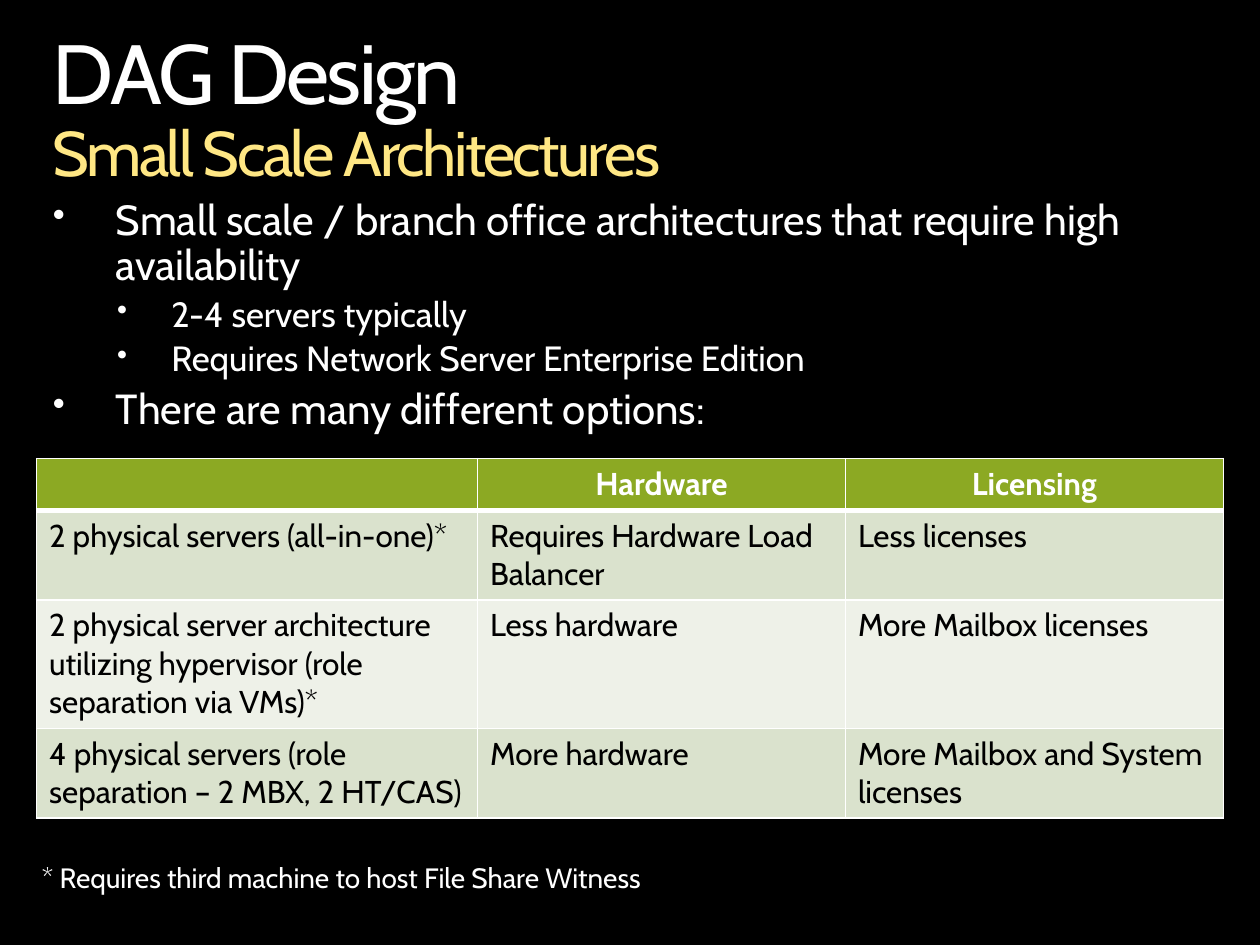
"""Build the slide on small scale DAG architectures."""
from lxml import etree
from pptx import Presentation
from pptx import util as u
from pptx.dml.color import RGBColor
from pptx.enum import text
from pptx.oxml.ns import qn

FONT = "Cabin"
WHITE, BLACK, YELLOW, GREEN = "FFFFFF", "000000", "FFE784", "8CA923"
BANDS = ["DAE2CD", "EEF1E8"]

BULLETS = [
    (0, "Small scale / branch office architectures that require high availability"),
    (1, "2-4 servers typically"),
    (1, "Requires Network Server Enterprise Edition"),
    (0, "There are many different options:"),
]
BULLET_LEVELS = [(24, 0.5, 0.5), (20, 0.94, 0.43)]

OPTIONS = [
    ["", "Hardware", "Licensing"],
    ["2 physical servers (all-in-one)*", "Requires Hardware Load Balancer", "Less licenses"],
    ["2 physical server architecture utilizing hypervisor (role separation via VMs)*",
     "Less hardware", "More Mailbox licenses"],
    ["4 physical servers (role separation – 2 MBX, 2 HT/CAS)",
     "More hardware", "More Mailbox and System licenses"],
]
COLUMN_WIDTHS = [3.5, 2.92, 3]
ROW_HEIGHTS = [0.41, 0.71, 1.02, 0.71]


def color(value):
    """Turn a hex string into a colour."""
    return RGBColor.from_string(value)


def set_font(font, size, value, bold=False):
    """Set the typeface, size, colour and weight of a font."""
    font.name = FONT
    font.size = u.Pt(size)
    font.bold = bold
    font.color.rgb = color(value)


def add_box(page, left, top, width, height):
    """Add a wrapping text box without margins and return its frame."""
    frame = page.shapes.add_textbox(*map(u.Inches, (left, top, width, height))).text_frame
    frame.word_wrap = True
    frame.auto_size = text.MSO_AUTO_SIZE.NONE
    frame.margin_left = frame.margin_right = frame.margin_top = frame.margin_bottom = 0
    return frame


def add_title(page):
    """Add the two-line title with tightened letter spacing."""
    para = add_box(page, 0.42, 0.25, 9.17, 1.2).paragraphs[0]
    para.line_spacing = 0.9
    lines = [("DAG Design", 48, WHITE), ("Small Scale Architectures", 36, YELLOW)]
    for index, (words, size, value) in enumerate(lines):
        if index:
            para.add_line_break()
        span = para.add_run()
        span.text = words
        set_font(span.font, size, value)
        span.font._element.set("spc", "-150")


def add_bullets(page):
    """Add the two-level bullet list."""
    frame = add_box(page, 0.42, 1.58, 9.17, 1.99)
    for index, (level, words) in enumerate(BULLETS):
        para = frame.add_paragraph() if index else frame.paragraphs[0]
        size, margin, hanging = BULLET_LEVELS[level]
        props = para._p.get_or_add_pPr()
        props.set("marL", str(u.Inches(margin)))
        props.set("indent", str(-u.Inches(hanging)))
        etree.SubElement(props, qn("a:buSzPct"), val="85000")
        etree.SubElement(props, qn("a:buChar"), char="•")
        para.level = level
        para.text = words
        para.line_spacing = 0.9
        if index:
            para.space_before = u.Pt(size * 0.2)
        set_font(para.font, size, WHITE)


def add_borders(cell, top, bottom):
    """Draw white borders around a cell, with widths in points."""
    props = cell._tc.get_or_add_tcPr()
    for side, width in (("L", 1), ("R", 1), ("T", top), ("B", bottom)):
        line = etree.SubElement(props, qn(f"a:ln{side}"), w=str(u.Pt(width)))
        fill = etree.SubElement(line, qn("a:solidFill"))
        etree.SubElement(fill, qn("a:srgbClr"), val=WHITE)


def add_options(page):
    """Add the table that compares the options."""
    table = page.shapes.add_table(
        len(OPTIONS), len(COLUMN_WIDTHS), u.Inches(0.29), u.Inches(3.64),
        u.Inches(sum(COLUMN_WIDTHS)), u.Inches(sum(ROW_HEIGHTS))).table
    for column, width in zip(table.columns, COLUMN_WIDTHS):
        column.width = u.Inches(width)
    for index, (row, height, entries) in enumerate(zip(table.rows, ROW_HEIGHTS, OPTIONS)):
        row.height = u.Inches(height)
        header = index == 0
        for cell, words in zip(row.cells, entries):
            add_borders(cell, 3 if index == 1 else 1, 3 if header else 1)
            cell.fill.solid()
            cell.fill.fore_color.rgb = color(GREEN if header else BANDS[(index - 1) % 2])
            cell.text = words
            para = cell.text_frame.paragraphs[0]
            para.alignment = text.PP_ALIGN.CENTER if header else text.PP_ALIGN.LEFT
            set_font(para.font, 18, WHITE if header else BLACK, header)


def add_footnote(page):
    """Add the note below the table."""
    para = add_box(page, 0.33, 6.83, 8.25, 0.27).paragraphs[0]
    para.text = "* Requires third machine to host File Share Witness"
    set_font(para.font, 16, WHITE)


def main():
    """Build and save the deck."""
    deck = Presentation()
    deck.slide_width, deck.slide_height = u.Inches(10), u.Inches(7.5)
    page = deck.slides.add_slide(deck.slide_layouts[6])
    page.background.fill.solid()
    page.background.fill.fore_color.rgb = color(BLACK)
    add_title(page)
    add_bullets(page)
    add_options(page)
    add_footnote(page)
    deck.save("out.pptx")


if __name__ == "__main__":
    main()
